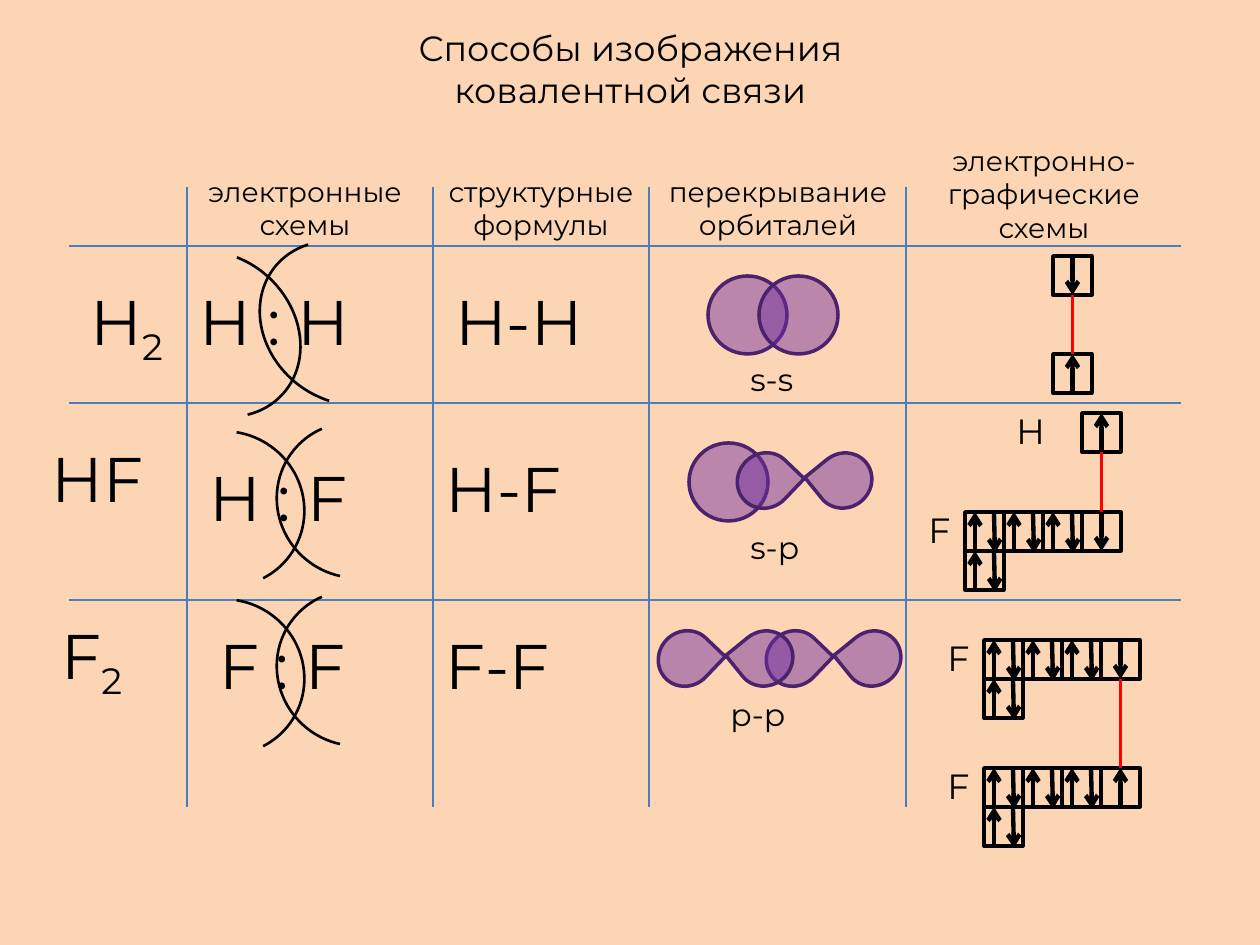
from lxml.etree import SubElement
from pptx import Presentation
from pptx.dml.color import RGBColor
from pptx.enum.shapes import MSO_CONNECTOR, MSO_SHAPE
from pptx.enum.text import MSO_ANCHOR, MSO_AUTO_SIZE, PP_ALIGN
from pptx.oxml.ns import qn
from pptx.util import Emu, Pt

SCALE = 914400 / 126
INK, RED, GRID, RIM, PLUM = "000000", "FF0000", "4B7EBC", "4C216D", "7030A0"
CELL = 39
TOP, BOTTOM = 0, 2


def px(*lens):
    return [Emu(round(n * SCALE)) for n in lens]


def color(code):
    return RGBColor.from_string(code)


class Board:
    """Shared text style plus the slide being drawn."""

    def __init__(self, slide, face):
        self.slide, self.face = slide, face
        self.shapes = slide.shapes

    def fill_text(self, frame, text, size, center=False, sub=""):
        look = {"word_wrap": True, "vertical_anchor": MSO_ANCHOR.TOP,
                "auto_size": MSO_AUTO_SIZE.SHAPE_TO_FIT_TEXT}
        for key, value in look.items():
            setattr(frame, key, value)
        para = frame.paragraphs[0]
        para.alignment = PP_ALIGN.CENTER if center else PP_ALIGN.LEFT
        for part in filter(None, (text, sub)):
            run = para.add_run()
            run.text = part
            for key, value in {"name": self.face, "size": Pt(size), "bold": False}.items():
                setattr(run.font, key, value)
            run.font.color.rgb = color(INK)
        if sub:
            run._r.get_or_add_rPr().set("baseline", "-25000")

    def title(self, text, box, size):
        head = self.shapes.title
        for key, value in zip(("left", "top", "width", "height"), px(*box)):
            setattr(head, key, value)
        self.fill_text(head.text_frame, text, size, center=True)

    def label(self, text, box, size, center=False, sub=""):
        self.fill_text(self.shapes.add_textbox(*px(*box)).text_frame, text, size, center, sub)

    def shape(self, kind, box, line, width, turn=0, fill=None, alpha=100):
        item = self.shapes.add_shape(kind, *px(*box))
        item.shadow.inherit = False
        item.rotation = turn
        item.line.color.rgb = color(line)
        item.line.width = Pt(width)
        if fill:
            item.fill.solid()
            item.fill.fore_color.rgb = color(fill)
            tone = item._element.spPr.find(qn("a:solidFill"))[0]
            SubElement(tone, qn("a:alpha")).set("val", str(alpha * 1000))
        else:
            item.fill.background()
        return item

    def line(self, ends, tint, width, arrow=False):
        item = self.shapes.add_connector(MSO_CONNECTOR.STRAIGHT, *px(*ends))
        item.line.color.rgb = color(tint)
        item.line.width = Pt(width)
        props = item._element.spPr
        if arrow:
            SubElement(props.find(qn("a:ln")), qn("a:tailEnd")).set("type", "arrow")
        SubElement(props, qn("a:effectLst"))
        return item

    def join(self, start, side, stop, goal, tint, width, arrow=False):
        item = self.line((0, 0, 0, 0), tint, width, arrow)
        item.begin_connect(start, side)
        item.end_connect(stop, goal)

    def bond(self, upper, lower):
        self.join(upper, BOTTOM, lower, TOP, RED, 2)

    def arc(self, box, turn):
        item = self.shape(MSO_SHAPE.ARC, box, INK, 1.5, turn)
        item.adjustments[0], item.adjustments[1] = 145.36, 15.73

    def sphere(self, x, y):
        self.shape(MSO_SHAPE.OVAL, (x, y, 79, 78), RIM, 2, fill=PLUM, alpha=47)

    def lobes(self, x, y):
        """Draw a p orbital: two drops meeting at their points."""
        for left, turn in ((x, 43.7), (x + 79, 231)):
            self.shape(MSO_SHAPE.TEAR, (left, y, 54, 57), RIM, 2, turn, PLUM, 49)

    def cell(self, x, y):
        return self.shape(MSO_SHAPE.RECTANGLE, (x, y, CELL, CELL), INK, 2)

    def single(self, x, y, up):
        box = self.cell(x, y)
        start, stop = (BOTTOM, TOP) if up else (TOP, BOTTOM)
        self.join(box, start, box, stop, INK, 2.5, arrow=True)
        return box

    def pair(self, x, y):
        self.cell(x, y)
        self.line((x + 10, y + CELL, x + 10, y), INK, 2.5, arrow=True)
        self.line((x + 29, y, x + 30, y + CELL + 2), INK, 2.5, arrow=True)

    def fluor(self, x, y, up):
        """Draw the outer shell of F and return the cell of its lone electron."""
        for col, row in ((2, 0), (1, 0), (0, 0), (0, 1)):
            self.pair(x + col * CELL, y + row * CELL)
        self.label("F", (x - 49, y - 10, 49, 55), 20)
        return self.single(x + 3 * CELL, y, up)


def main():
    deck = Presentation()
    deck.slide_width, deck.slide_height = px(1260, 945)
    slide = deck.slides.add_slide(deck.slide_layouts[5])
    slide.background.fill.solid()
    slide.background.fill.fore_color.rgb = color("FCD5B5")
    board = Board(slide, "Montserrat")
    board.title("Способы изображения ковалентной связи", (286, 20, 689, 97), 20)

    for y in (246, 403, 600):
        board.line((69, y, 1181, y), GRID, 0.75)
    for x in (187, 433, 649, 906):
        board.line((x, 187, x, 807), GRID, 0.75)

    for text, x, y, high in (("электронные схемы", 177, 168, 81),
                             ("структурные формулы", 413, 168, 81),
                             ("перекрывание орбиталей", 650, 168, 81),
                             ("электронно-графические схемы", 916, 137, 115)):
        board.label(text, (x, y, 256, high), 16, center=True)

    for text, sub, x, y, wide in (("Н", "2", 78, 276, 118), ("НF", "", 39, 433, 158),
                                  ("F", "2", 49, 610, 147), ("Н : Н", "", 187, 276, 210),
                                  ("Н : F", "", 197, 452, 185), ("F : F", "", 207, 620, 207),
                                  ("Н-H", "", 443, 276, 178), ("Н-F", "", 433, 443, 186),
                                  ("F-F", "", 433, 620, 197)):
        board.label(text, (x, y, wide, 89), 36, sub=sub)

    for x, y, wide, turn in ((127, 257, 179, 42.7), (255, 246, 179, 218.9),
                             (147, 432, 158, 35.6), (276, 423, 158, 218.9),
                             (147, 600, 158, 35.6), (276, 591, 158, 218.9)):
        board.arc((x, y, wide, 154), turn)

    for x, y in ((708, 276), (759, 276), (689, 443)):
        board.sphere(x, y)
    for x, y in ((738, 452), (767, 630), (659, 630)):
        board.lobes(x, y)
    for text, x, y in (("s-s", 738, 354), ("s-p", 738, 522), ("p-p", 718, 689)):
        board.label(text, (x, y, 98, 50), 18)

    board.label("H", (1004, 403, 98, 55), 20)
    board.bond(board.single(1053, 256, False), board.single(1053, 354, True))
    board.bond(board.single(1082, 413, True), board.fluor(965, 512, False))
    board.bond(board.fluor(984, 640, False), board.fluor(984, 768, True))
    deck.save("out.pptx")


if __name__ == "__main__":
    main()
